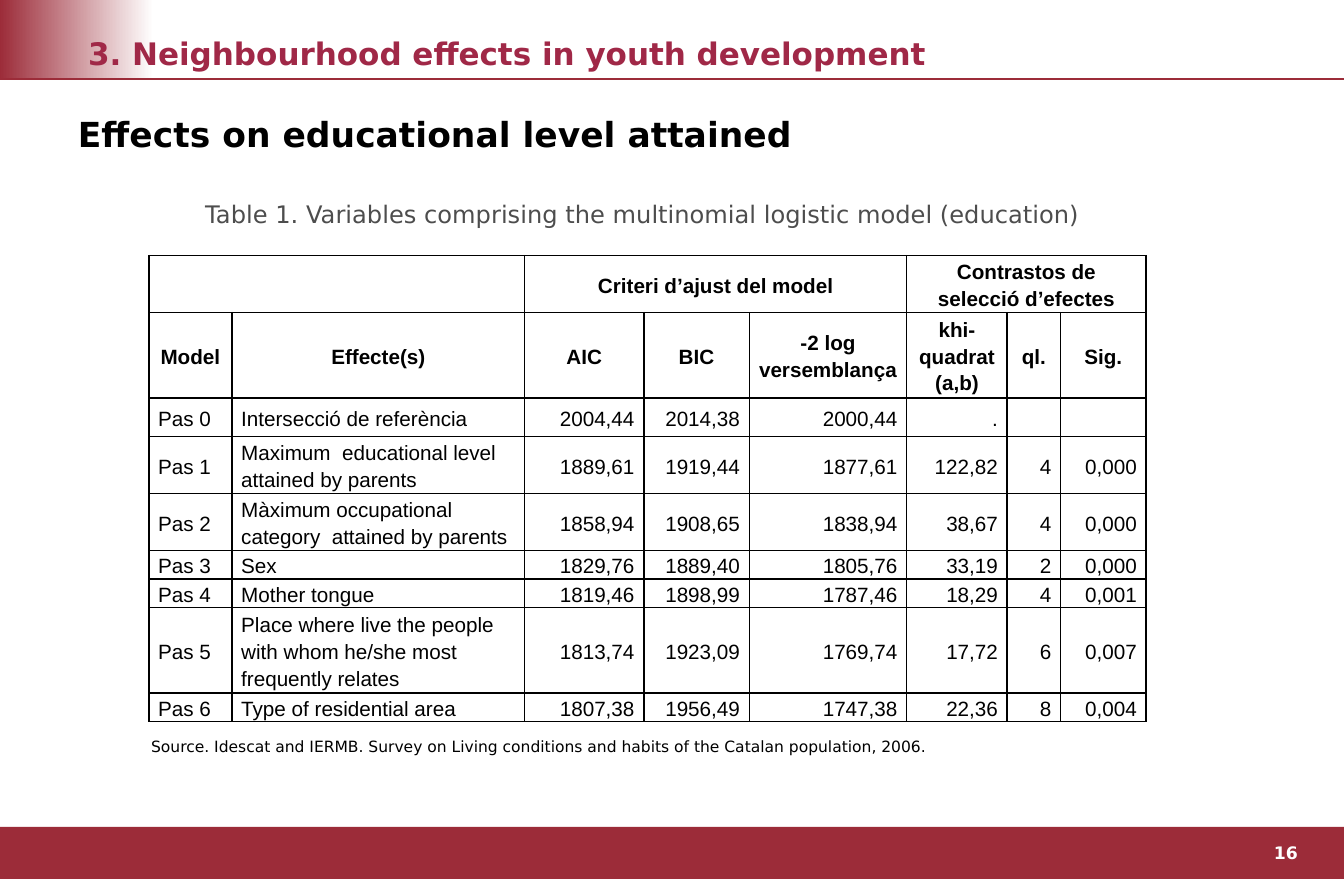
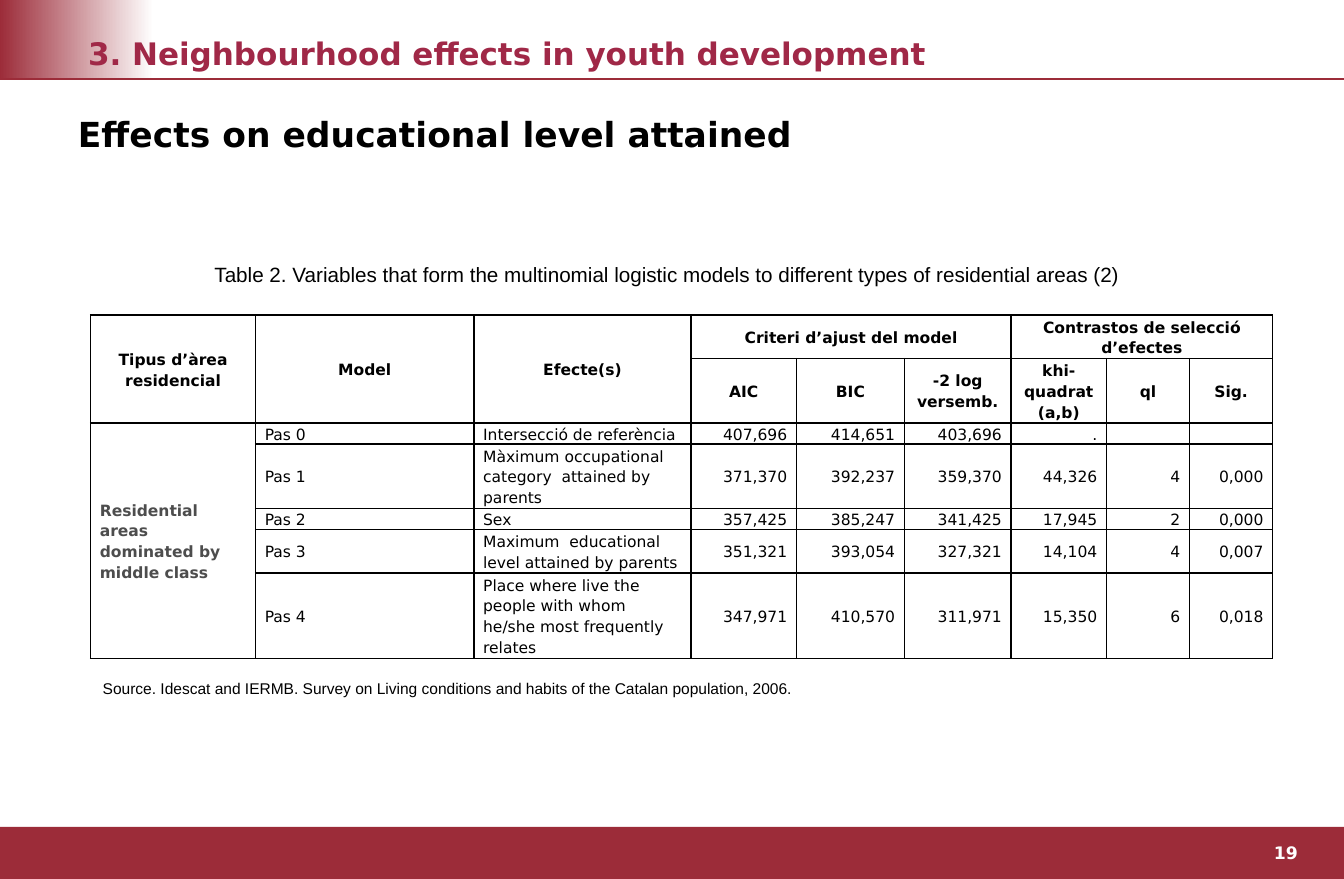
from lxml import etree
from pptx import Presentation
from pptx.dml.color import RGBColor
from pptx.enum.shapes import MSO_CONNECTOR, MSO_SHAPE
from pptx.enum.text import MSO_ANCHOR, MSO_AUTO_SIZE, PP_ALIGN
from pptx.oxml.ns import qn
from pptx.util import Inches, Pt

RECTANGLE = MSO_SHAPE.RECTANGLE
STRAIGHT = MSO_CONNECTOR.STRAIGHT
TOP, MIDDLE = MSO_ANCHOR.TOP, MSO_ANCHOR.MIDDLE
LEFT, CENTER, RIGHT, JUSTIFY = PP_ALIGN.LEFT, PP_ALIGN.CENTER, PP_ALIGN.RIGHT, PP_ALIGN.JUSTIFY
NO_AUTOFIT = MSO_AUTO_SIZE.NONE
SANS, ARIAL = "DejaVu Sans", "Arial"
COLORS = {"band": "9C2C39", "title": "A02847", "text": "000000", "muted": "4D4D4D", "paper": "FFFFFF"}
WIDTH, HEIGHT = 65 / 6, 18 / 2.54  # A4 slide width, 18 cm high
RULE_Y, FOOTER_H = 0.64, 0.42
CELL_INSET = Pt(5.4)
SECTION = "3. Neighbourhood effects in youth development"
SUBTITLE = "Effects on educational level attained"
SOURCE = ("Source. Idescat and IERMB. Survey on Living conditions and habits "
          "of the Catalan population, 2006.")

# Content of each slide; boxes are left, top, width, height, merges are first and last cell
PAGES = [
    {
        "number": "16",
        "caption": "Table 1. Variables comprising the multinomial logistic model (education)",
        "caption_box": (1.12, 1.55, 8.12, 0.35), "caption_style": (14, SANS, "muted"),
        "source_box": (1.12, 5.89, 8.2, 0.25), "source_font": SANS,
        "corner": (1.2, 2.06), "table_style": (12, ARIAL), "label_columns": 2,
        "columns": [0.67, 2.36, 0.96, 0.85, 1.27, 0.81, 0.43, 0.69],
        "heights": [0.46, 0.69, 0.31, 0.46, 0.46, 0.23, 0.23, 0.69, 0.23],
        "merges": [(0, 0, 0, 1), (0, 2, 0, 4), (0, 5, 0, 7)],
        "rows": [
            ["", "", "Criteri d’ajust del model", "", "", "Contrastos de selecció d’efectes", "", ""],
            ["Model", "Effecte(s)", "AIC", "BIC", "-2 log versemblança", "khi-quadrat (a,b)", "ql.", "Sig."],
            ["Pas 0", "Intersecció de referència", "2004,44", "2014,38", "2000,44", ".", "", ""],
            ["Pas 1", "Maximum  educational level attained by parents",
             "1889,61", "1919,44", "1877,61", "122,82", "4", "0,000"],
            ["Pas 2", "Màximum occupational category  attained by parents",
             "1858,94", "1908,65", "1838,94", "38,67", "4", "0,000"],
            ["Pas 3", "Sex", "1829,76", "1889,40", "1805,76", "33,19", "2", "0,000"],
            ["Pas 4", "Mother tongue", "1819,46", "1898,99", "1787,46", "18,29", "4", "0,001"],
            ["Pas 5", "Place where live the people with whom he/she most frequently relates",
             "1813,74", "1923,09", "1769,74", "17,72", "6", "0,007"],
            ["Pas 6", "Type of residential area", "1807,38", "1956,49", "1747,38", "22,36", "8", "0,004"],
        ],
    },
    {
        "number": "19",
        "caption": "Table 2. Variables that form the multinomial logistic models "
                   "to different types of residential areas (2)",
        "caption_box": (0.42, 2.06, 9.92, 0.3), "caption_style": (12, ARIAL, "text"),
        "source_box": (0.73, 5.42, 8.2, 0.26), "source_font": ARIAL,
        "corner": (0.73, 2.54), "table_style": (9, SANS), "label_columns": 3,
        "columns": [1.33, 1.76, 1.75, 0.85, 0.87, 0.86, 0.77, 0.67, 0.67],
        "heights": [0.35, 0.52, 0.17, 0.52, 0.17, 0.35, 0.69],
        "merges": [(0, 0, 1, 0), (0, 1, 1, 1), (0, 2, 1, 2), (0, 3, 0, 5), (0, 6, 0, 8), (2, 0, 6, 0)],
        "rows": [
            ["Tipus d’àrea residencial", "Model", "Efecte(s)", "Criteri d’ajust del model", "", "",
             "Contrastos de selecció d’efectes", "", ""],
            ["", "", "", "AIC", "BIC", "-2 log versemb.", "khi-quadrat (a,b)", "ql", "Sig."],
            ["Residential areas dominated by middle class", "Pas 0", "Intersecció de referència",
             "407,696", "414,651", "403,696", ".", "", ""],
            ["", "Pas 1", "Màximum occupational category  attained by parents",
             "371,370", "392,237", "359,370", "44,326", "4", "0,000"],
            ["", "Pas 2", "Sex", "357,425", "385,247", "341,425", "17,945", "2", "0,000"],
            ["", "Pas 3", "Maximum  educational level attained by parents",
             "351,321", "393,054", "327,321", "14,104", "4", "0,007"],
            ["", "Pas 4", "Place where live the people with whom he/she most frequently relates",
             "347,971", "410,570", "311,971", "15,350", "6", "0,018"],
        ],
    },
]


def format_paragraph(paragraph, size, face, color, bold=False, align=LEFT):
    paragraph.alignment = align
    font = paragraph.font
    font.size, font.name, font.bold = Pt(size), face, bold
    font.color.rgb = RGBColor.from_string(COLORS[color])


def write_box(holder, text, box, style, anchor=MIDDLE):
    holder.left, holder.top, holder.width, holder.height = map(Inches, box)
    frame = holder.text_frame
    frame.word_wrap = True
    frame.auto_size = NO_AUTOFIT
    frame.vertical_anchor = anchor
    frame.text = text
    format_paragraph(frame.paragraphs[0], *style)


prs = Presentation()
prs.slide_width, prs.slide_height = Inches(WIDTH), Inches(HEIGHT)
layout = prs.slide_layouts[5]
slides = [prs.slides.add_slide(layout) for _ in PAGES]

# Shared header and footer, moved from the first slide to the layout
shapes = slides[0].shapes
fade = shapes.add_shape(RECTANGLE, 0, 0, Inches(1.24), Inches(RULE_Y))
fade.fill.gradient()
fade.fill.gradient_angle = 0
for stop, position, color in zip(fade.fill.gradient_stops, (0, 1), ("band", "paper")):
    stop.position = position
    stop.color.rgb = RGBColor.from_string(COLORS[color])

footer = shapes.add_shape(RECTANGLE, 0, Inches(HEIGHT - FOOTER_H), Inches(WIDTH), Inches(FOOTER_H))
footer.fill.solid()
footer.fill.fore_color.rgb = RGBColor.from_string(COLORS["band"])
for band in (fade, footer):
    band.line.fill.background()
    band.shadow.inherit = False

rule = shapes.add_connector(STRAIGHT, 0, Inches(RULE_Y), Inches(WIDTH), Inches(RULE_Y))
rule.line.color.rgb = RGBColor.from_string(COLORS["band"])
rule.line.width = Pt(1)
etree.SubElement(rule._element.spPr, qn("a:effectLst"))
for part in (fade, footer, rule):
    layout.shapes._spTree.append(part._element)

for slide, page in zip(slides, PAGES):
    # Titles, caption, source and page number
    write_box(slide.shapes.title, SECTION, (0.61, 0.1, 8.87, 0.66), (18, SANS, "title", True))
    for text, box, style, anchor in [
        (SUBTITLE, (0.53, 0.86, 9.06, 0.55), (20, SANS, "text", True), TOP),
        (page["caption"], page["caption_box"], (*page["caption_style"], False, CENTER), MIDDLE),
        (SOURCE, page["source_box"], (9, page["source_font"], "text", False, JUSTIFY), MIDDLE),
        (page["number"], (9.9, 6.74, 0.93, 0.27), (10, SANS, "paper", True, CENTER), MIDDLE),
    ]:
        write_box(slide.shapes.add_textbox(0, 0, 0, 0), text, box, style, anchor)

    # Table grid
    columns, heights = page["columns"], page["heights"]
    size, face = page["table_style"]
    table = slide.shapes.add_table(
        len(heights), len(columns), *map(Inches, (*page["corner"], sum(columns), sum(heights)))).table
    table.first_row = table.horz_banding = False
    for column, width in zip(table.columns, columns):
        column.width = Inches(width)
    for row, height in zip(table.rows, heights):
        row.height = Inches(height)
    for top, left, bottom, right in page["merges"]:
        table.cell(top, left).merge(table.cell(bottom, right))

    # Cells: two bold header rows, labels on the left, values on the right
    for r, texts in enumerate(page["rows"]):
        for c, text in enumerate(texts):
            cell = table.cell(r, c)
            cell.text = text
            cell.vertical_anchor = MIDDLE
            cell.margin_left = cell.margin_right = CELL_INSET
            cell.margin_top = cell.margin_bottom = 0
            header = r < 2
            area = not header and cell.is_merge_origin
            align = CENTER if header else LEFT if c < page["label_columns"] else RIGHT
            paragraph = cell.text_frame.paragraphs[0]
            paragraph.line_spacing = 1.15
            format_paragraph(paragraph, size, face, "muted" if area else "text", header or area, align)
            if not text:
                etree.SubElement(paragraph._p, qn("a:endParaRPr"), sz=str(size * 100))
            properties = cell._tc.get_or_add_tcPr()
            for side in "LRTB":
                border = etree.SubElement(properties, qn(f"a:ln{side}"), w=str(Pt(1)))
                paint = etree.SubElement(border, qn("a:solidFill"))
                etree.SubElement(paint, qn("a:srgbClr"), val=COLORS["text"])
            cell.fill.background()

prs.save("out.pptx")
